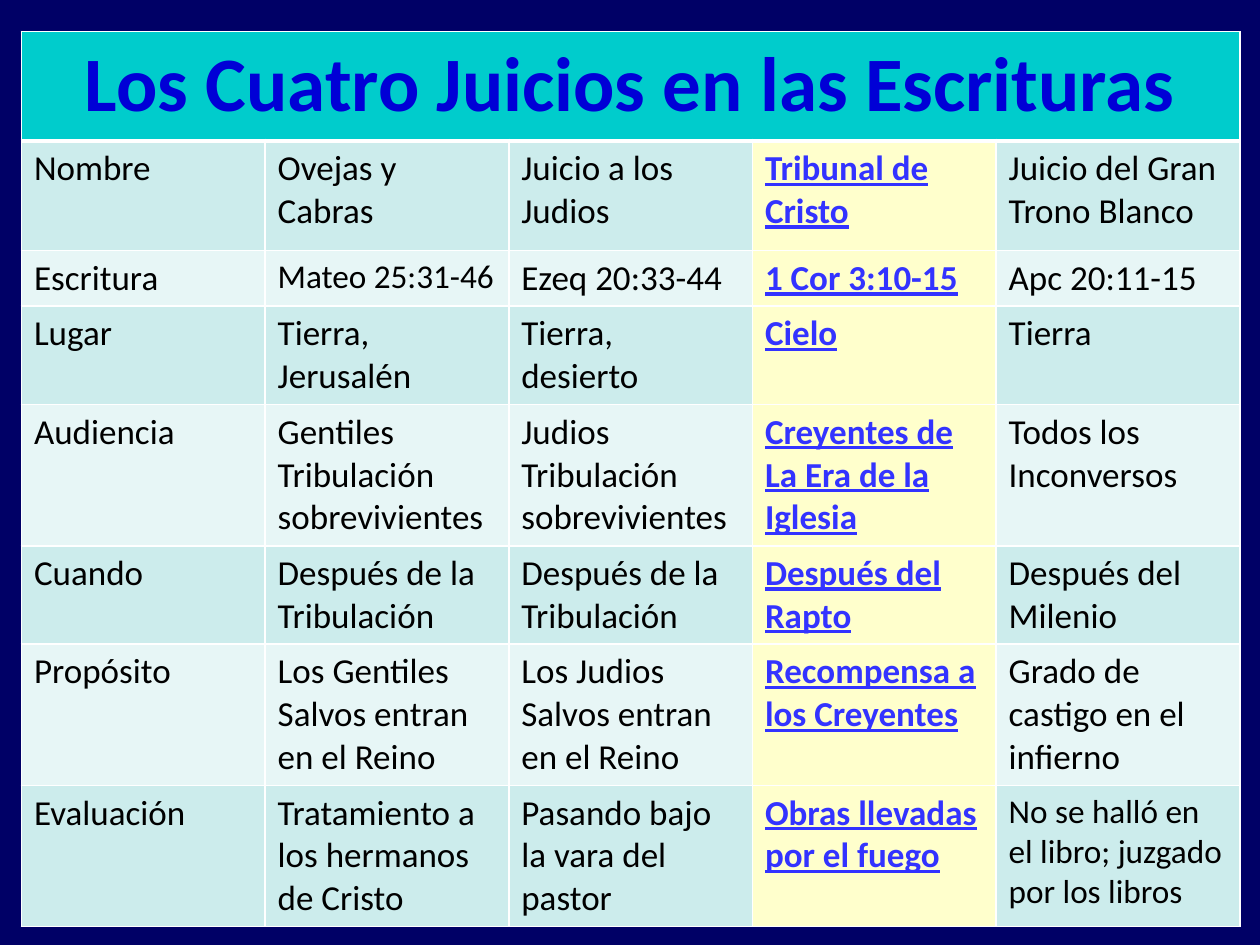
from lxml import etree
from pptx import Presentation
from pptx.dml.color import RGBColor
from pptx.enum.text import PP_ALIGN
from pptx.oxml.ns import qn
from pptx.util import Inches, Pt

CENTER = PP_ALIGN.CENTER
LEFT = PP_ALIGN.LEFT

NAVY = RGBColor(0x00, 0x00, 0x66)
TURQUOISE = RGBColor(0x00, 0xCC, 0xCC)
TITLE_BLUE = RGBColor(0x00, 0x00, 0xD6)
LINK_BLUE = RGBColor(0x33, 0x33, 0xFF)
BLACK = RGBColor(0x00, 0x00, 0x00)
WHITE = RGBColor(0xFF, 0xFF, 0xFF)
AQUA = RGBColor(0xCC, 0xEC, 0xEC)
PALE_AQUA = RGBColor(0xE7, 0xF6, 0xF6)
CREAM = RGBColor(0xFF, 0xFF, 0xCC)

TITLE = "Los Cuatro Juicios en las Escrituras"
JUDGMENTS = [
    ["Nombre", "Ovejas y Cabras", "Juicio a los Judios",
     "Tribunal de Cristo", "Juicio del Gran Trono Blanco"],
    ["Escritura", "Mateo 25:31-46", "Ezeq 20:33-44",
     "1 Cor 3:10-15", "Apc 20:11-15"],
    ["Lugar", "Tierra, Jerusalén", "Tierra,\ndesierto", "Cielo", "Tierra"],
    ["Audiencia", "Gentiles Tribulación sobrevivientes",
     "Judios Tribulación sobrevivientes",
     "Creyentes de\nLa Era de la Iglesia", "Todos los Inconversos"],
    ["Cuando", "Después de la Tribulación", "Después de la Tribulación",
     "Después del Rapto", "Después del Milenio"],
    ["Propósito", "Los Gentiles Salvos entran en el Reino",
     "Los Judios Salvos entran en el Reino",
     "Recompensa a los Creyentes", "Grado de castigo en el infierno"],
    ["Evaluación", "Tratamiento a los hermanos de Cristo",
     "Pasando bajo la vara del pastor", "Obras llevadas por el fuego",
     "No se halló en el libro; juzgado por los libros"],
]
ROW_HEIGHTS = [0.87, 0.87, 0.41, 0.71, 1.01, 0.71, 1.01, 1.01]
COLUMN_COUNT = 5
BELIEVERS_COLUMN = 3
SMALLER_CELLS = {(2, 1), (7, 4)}

TITLE_FORMAT = {"name": "Calibri", "size": Pt(44), "bold": True, "underline": False}
BODY_FORMAT = {"name": "Calibri", "size": Pt(20), "bold": False, "underline": False}
BELIEVERS_FORMAT = {**BODY_FORMAT, "bold": True, "underline": True}
SMALLER_FORMAT = {**BODY_FORMAT, "size": Pt(19)}


class SlideBuilder:
    def __init__(self, deck, background):
        self.page = deck.slides.add_slide(deck.slide_layouts[6])
        fill = self.page.background.fill
        fill.solid()
        fill.fore_color.rgb = background

    def table(self, left, top, width, row_heights, column_count):
        frame = self.page.shapes.add_table(
            len(row_heights), column_count, Inches(left), Inches(top),
            Inches(width), Inches(sum(row_heights)))
        for row, height in zip(frame.table.rows, row_heights):
            row.height = Inches(height)
        return frame.table

    def borders(self, cell, widths):
        properties = cell._tc.get_or_add_tcPr()
        for side, width in widths.items():
            line = etree.SubElement(properties, qn(f"a:ln{side}"), w=str(Pt(width)))
            fill = etree.SubElement(line, qn("a:solidFill"))
            etree.SubElement(fill, qn("a:srgbClr"), val=str(WHITE))

    def background(self, cell, color):
        cell.fill.solid()
        cell.fill.fore_color.rgb = color

    def text(self, cell, content, font_format, color, alignment=LEFT):
        cell.text_frame.text = content
        for para in cell.text_frame.paragraphs:
            para.alignment = alignment
            for span in para.runs:
                for attribute, value in font_format.items():
                    setattr(span.font, attribute, value)
                span.font.color.rgb = color


def main():
    deck = Presentation()
    deck.slide_width, deck.slide_height = Inches(10), Inches(7.5)
    builder = SlideBuilder(deck, NAVY)
    table = builder.table(0.17, 0.25, 9.67, ROW_HEIGHTS, COLUMN_COUNT)

    for row in range(len(ROW_HEIGHTS)):
        widths = {"L": 1, "R": 1, "T": 3 if row == 1 else 1, "B": 3 if row == 0 else 1}
        for column in range(COLUMN_COUNT):
            builder.borders(table.cell(row, column), widths)

    heading = table.cell(0, 0)
    heading.merge(table.cell(0, COLUMN_COUNT - 1))
    builder.background(heading, TURQUOISE)
    builder.text(heading, TITLE, TITLE_FORMAT, TITLE_BLUE, CENTER)

    for row, entries in enumerate(JUDGMENTS, start=1):
        for column, content in enumerate(entries):
            cell = table.cell(row, column)
            if column == BELIEVERS_COLUMN:
                builder.background(cell, CREAM)
                builder.text(cell, content, BELIEVERS_FORMAT, LINK_BLUE)
            else:
                smaller = (row, column) in SMALLER_CELLS
                builder.background(cell, AQUA if row % 2 else PALE_AQUA)
                builder.text(cell, content, SMALLER_FORMAT if smaller else BODY_FORMAT, BLACK)

    deck.save("out.pptx")


if __name__ == "__main__":
    main()
